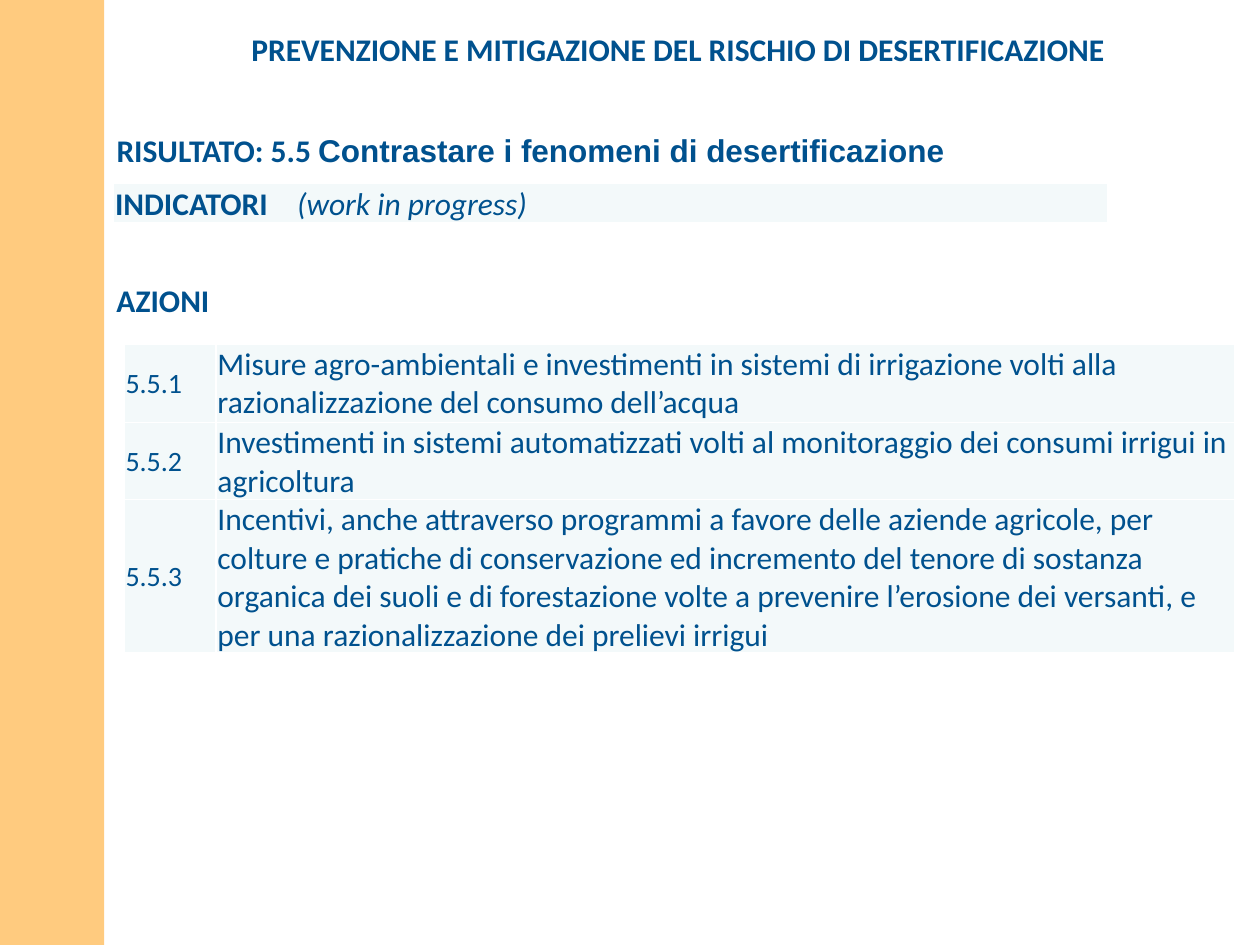
import pptx
import pptx.util
import pptx.dml.color
import pptx.enum.shapes
import pptx.enum.text
import pptx.oxml
import pptx.oxml.ns
from lxml import etree

Pt = pptx.util.Pt
RGB = pptx.dml.color.RGBColor.from_string
Align = pptx.enum.text.PP_ALIGN
Anchor = pptx.enum.text.MSO_ANCHOR
qn = pptx.oxml.ns.qn

theme = {
    "ink": "00518E", "cell": "F3F9FA", "line": "FFFFFF", "band": "FF9900",
    "font": "Calibri", "alt": "Arial", "size": 18, "code": 16,
}


def style(para, size=theme["size"], bold=False):
    para.font.name = theme["font"]
    para.font.size = Pt(size)
    para.font.bold = bold
    para.font.color.rgb = RGB(theme["ink"])


def grid(left, top, widths, heights):
    table = slide.shapes.add_table(
        len(heights), len(widths), Pt(left), Pt(top),
        Pt(sum(widths)), Pt(sum(heights))).table
    table.first_row = table.horz_banding = False
    for col, width in zip(table.columns, widths):
        col.width = Pt(width)
    for row, height in zip(table.rows, heights):
        row.height = Pt(height)
    for cell in table.iter_cells():
        cell.margin_left = cell.margin_right = cell.margin_top = Pt(0.75)
        cell.margin_bottom = 0
        cell.vertical_anchor = Anchor.MIDDLE
        props = cell._tc.get_or_add_tcPr()
        for side in ("lnL", "lnR", "lnT", "lnB"):
            edge = etree.SubElement(props, qn("a:" + side), w=str(Pt(1)))
            fill = etree.SubElement(edge, qn("a:solidFill"))
            etree.SubElement(fill, qn("a:srgbClr"), val=theme["line"])
        cell.fill.solid()
        cell.fill.fore_color.rgb = RGB(theme["cell"])
    return table


deck = pptx.Presentation()
deck.slide_width, deck.slide_height = Pt(720), Pt(540)
slide = deck.slides.add_slide(deck.slide_layouts[5])

band = slide.shapes.add_shape(
    pptx.enum.shapes.MSO_SHAPE.RECTANGLE, 0, 0, Pt(59.5), Pt(540))
band.shadow.inherit = False
band.fill.solid()
band.fill.fore_color.rgb = RGB(theme["band"])
band.line.fill.background()
tint = band._element.spPr.find(qn("a:solidFill"))[0]
etree.SubElement(tint, qn("a:alpha"), val="50000")

title = slide.shapes.title
title.left, title.top, title.width, title.height = Pt(60), Pt(4), Pt(655), Pt(48)
title.fill.solid()
title.fill.fore_color.rgb = RGB(theme["line"])
frame = title.text_frame
frame.margin_left = frame.margin_right = frame.margin_top = frame.margin_bottom = 0
frame.vertical_anchor = Anchor.MIDDLE
frame.text = "PREVENZIONE E MITIGAZIONE DEL RISCHIO DI DESERTIFICAZIONE"
frame.paragraphs[0].alignment = Align.CENTER
style(frame.paragraphs[0], bold=True)

heads = [
    (71.5, 652, ["RISULTATO: 5.5 ", "Contrastare i fenomeni di desertificazione"]),
    (157, 80, ["AZIONI"]),
]
for top, width, parts in heads:
    box = slide.shapes.add_textbox(Pt(59.5), Pt(top), Pt(width), Pt(29))
    box.text_frame.word_wrap = True
    para = box.text_frame.paragraphs[0]
    style(para, bold=True)
    for part in parts:
        run = para.add_run()
        run.text = part
    if len(parts) > 1:
        run.font.name = theme["alt"]

para = grid(65, 105, [568], [22.5]).cell(0, 0).text_frame.paragraphs[0]
tabs = etree.SubElement(para._p.get_or_add_pPr(), qn("a:tabLst"))
etree.SubElement(tabs, qn("a:tab"), pos=str(Pt(104)), algn="l")
style(para)
label = para.add_run()
label.text = "INDICATORI\t"
label.font.bold = True
note = para.add_run()
note.text = "(work in progress)"
note.font.italic = True

tasks = [
    "Misure agro-ambientali e investimenti in sistemi di irrigazione volti alla "
    "razionalizzazione del consumo dell’acqua",
    "Investimenti in sistemi automatizzati volti al monitoraggio dei consumi "
    "irrigui in agricoltura",
    "Incentivi, anche attraverso programmi a favore delle aziende agricole, per "
    "colture e pratiche di conservazione ed incremento del tenore di sostanza "
    "organica dei suoli e di forestazione volte a prevenire l’erosione dei "
    "versanti, e per una razionalizzazione dei prelievi irrigui",
]
table = grid(71, 196.5, [52.5, 582], [45, 44, 87.5])
for row, task in enumerate(tasks):
    pairs = [(f"5.5.{row + 1}", theme["code"]), (task, theme["size"])]
    for col, (text, size) in enumerate(pairs):
        cell = table.cell(row, col)
        cell.text = text
        style(cell.text_frame.paragraphs[0], size)

deck.save("out.pptx")
